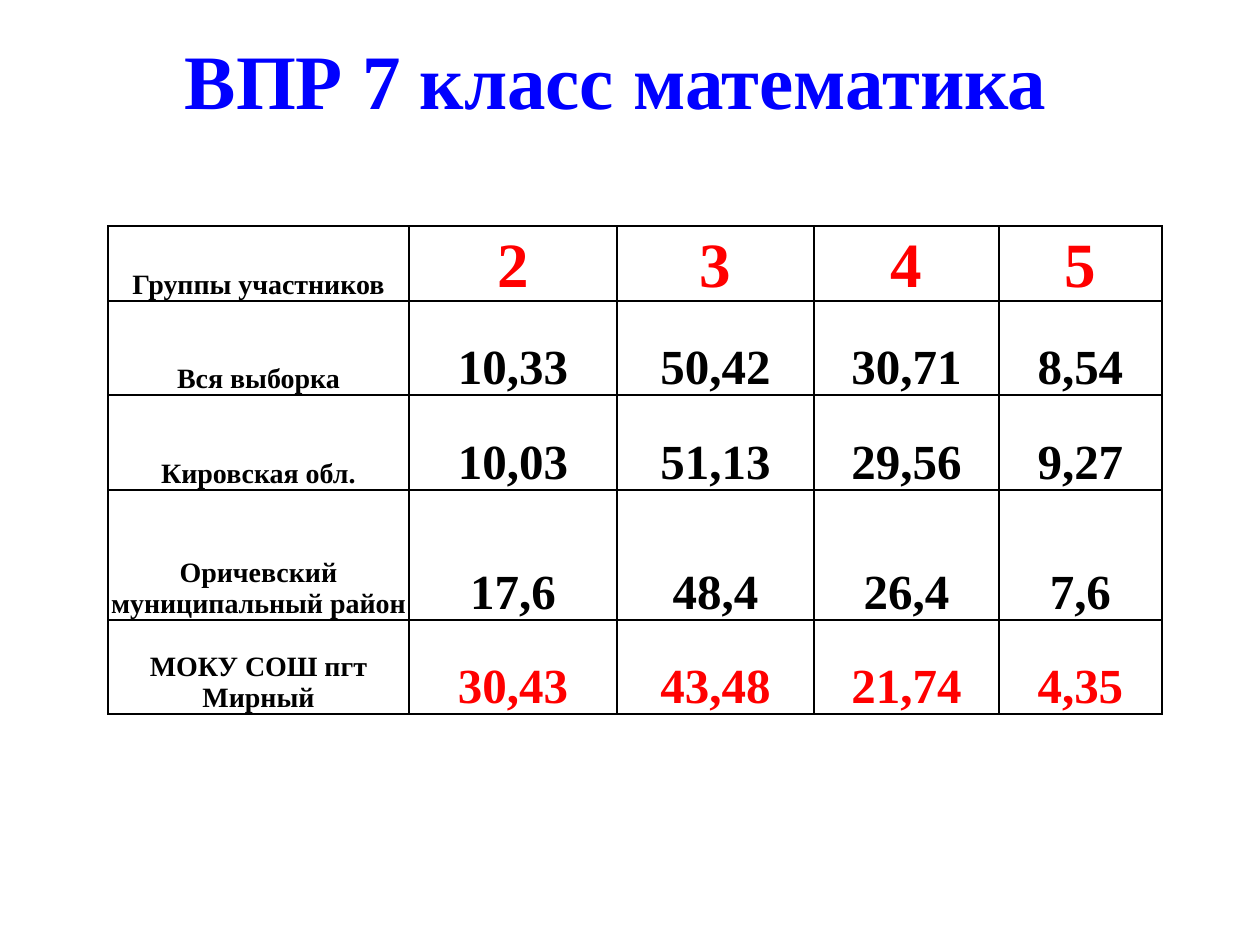
import pptx
import pptx.util
import pptx.dml.color
import pptx.enum.text
import pptx.oxml.ns
import lxml.etree

PX = 914400 / 126  # EMU in one px
BLUE, RED, BLACK = "0000FF", "FF0000", "000000"


def px(n):
    return pptx.util.Emu(round(n * PX))


def color(value):
    return pptx.dml.color.RGBColor.from_string(value)


class Deck:
    font = "Times New Roman"

    def __init__(self, width, height):
        self.prs = pptx.Presentation()
        self.prs.slide_width, self.prs.slide_height = px(width), px(height)
        self.s = None

    def add_slide(self):
        self.s = self.prs.slides.add_slide(self.prs.slide_layouts[5])

    def add_text(self, tf, text, size, fill):
        tf.word_wrap = True
        p = tf.paragraphs[0]
        p.alignment = pptx.enum.text.PP_ALIGN.CENTER
        r = p.add_run()
        r.text = text
        r.font.name = self.font
        r.font.size = pptx.util.Pt(size)
        r.font.bold = True
        r.font.color.rgb = color(fill)

    def title(self, text, left, top, width, height):
        sp = self.s.shapes.title
        sp.left, sp.top, sp.width, sp.height = map(px, (left, top, width, height))
        sp.text_frame.vertical_anchor = pptx.enum.text.MSO_ANCHOR.MIDDLE
        self.add_text(sp.text_frame, text, 44, BLUE)

    def border(self, cell):
        qn = pptx.oxml.ns.qn
        tc_pr = cell._tc.get_or_add_tcPr()
        for i, side in enumerate(("a:lnL", "a:lnR", "a:lnT", "a:lnB")):
            ln = lxml.etree.Element(qn(side), w=str(int(pptx.util.Pt(1))))
            fill = lxml.etree.SubElement(ln, qn("a:solidFill"))
            lxml.etree.SubElement(fill, qn("a:srgbClr"), val=BLACK)
            tc_pr.insert(i, ln)

    def table(self, rows, left, top, widths, heights, style):
        table = self.s.shapes.add_table(
            len(rows), len(widths), px(left), px(top),
            px(sum(widths)), px(sum(heights))).table
        table.first_row = table.horz_banding = False
        for column, width in zip(table.columns, widths):
            column.width = px(width)
        for row, height in zip(table.rows, heights):
            row.height = px(height)
        for i, values in enumerate(rows):
            for j, text in enumerate(values):
                cell = table.cell(i, j)
                cell.margin_left = cell.margin_right = cell.margin_top = px(1)
                cell.margin_bottom = 0
                cell.fill.background()
                cell.vertical_anchor = pptx.enum.text.MSO_ANCHOR.BOTTOM
                self.add_text(cell.text_frame, text, *style(i, j))
                self.border(cell)


ROWS = [
    ("Группы участников", "2", "3", "4", "5"),
    ("Вся выборка", "10,33", "50,42", "30,71", "8,54"),
    ("Кировская обл.", "10,03", "51,13", "29,56", "9,27"),
    ("Оричевский муниципальный район", "17,6", "48,4", "26,4", "7,6"),
    ("МОКУ СОШ пгт Мирный", "30,43", "43,48", "21,74", "4,35"),
]


def grade_style(row, column):
    """Size and colour: small labels, large red grades, red school results."""
    if column == 0:
        return 16, BLACK
    if row == 0:
        return 36, RED
    return 28, RED if row == len(ROWS) - 1 else BLACK


def main():
    deck = Deck(1260, 945)
    deck.add_slide()
    # Heading
    deck.title("ВПР 7 класс математика", 49, 0, 1134, 158)
    # Share of each grade by group
    deck.table(ROWS, 108, 226, (301, 208, 197, 185, 163),
               (75, 94, 95, 130, 94), grade_style)
    deck.prs.save("out.pptx")


if __name__ == "__main__":
    main()
